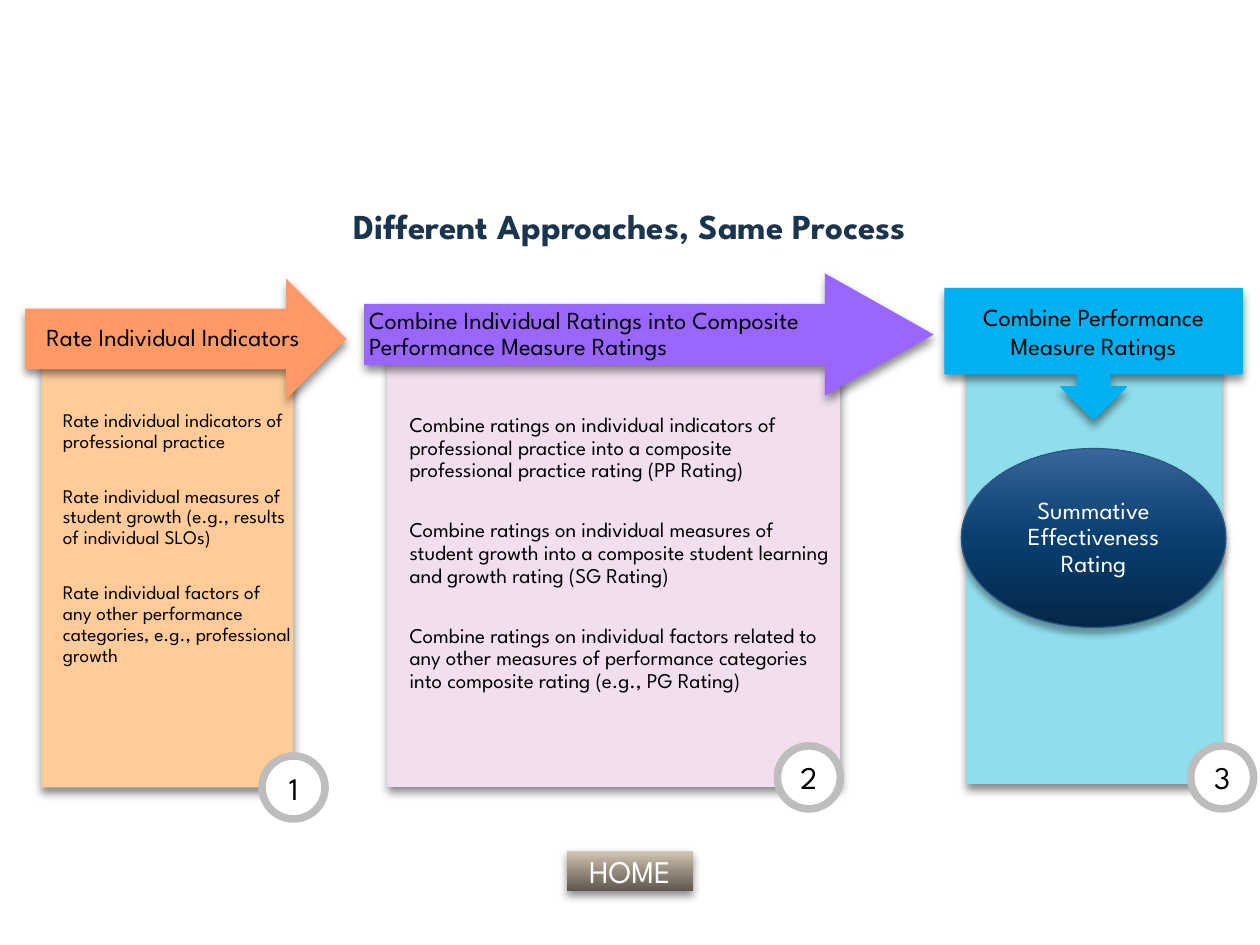
"""Build the slide that shows the three steps of the rating process."""
from dataclasses import dataclass
from typing import Optional

from lxml.etree import SubElement
from pptx import Presentation
from pptx.dml.color import RGBColor
from pptx.enum.shapes import MSO_SHAPE as Preset
from pptx.enum.text import MSO_ANCHOR as Anchor, PP_ALIGN as Align
from pptx.oxml.ns import qn
from pptx.util import Inches, Pt

FONT = "League Spartan"
BLACK, WHITE = "000000", "FFFFFF"
Stops = tuple[tuple[int, str], ...]
Box = tuple[float, float, float, float]
BRONZE: Stops = ((0, "5F574E"), (50, "988C7E"), (70, "B2A596"), (100, "D8CAB8"))
NAVY: Stops = ((0, "042747"), (50, "093F6F"), (70, "1A4C7E"), (100, "3B679A"))


@dataclass
class TextStyle:
    size: float
    color: str = BLACK
    bold: bool = False
    align: Align = Align.CENTER
    anchor: Anchor = Anchor.MIDDLE
    line_spacing: float = 1
    space_after: float = 0
    insets: Box = (0, 0, 0, 0)


@dataclass
class Block:
    preset: Preset
    box: Box
    fill: str | Stops
    line: Optional[str] = None
    line_width: float = 0.75
    shadow: Optional[tuple[int, int, int]] = (45, 5, 3)
    adjustments: tuple[float, ...] = ()
    paragraphs: tuple[str, ...] = ()
    style: Optional[TextStyle] = None


def rgb(value: str) -> RGBColor:
    return RGBColor.from_string(value)


def place(shape, box: Box) -> None:
    shape.left, shape.top, shape.width, shape.height = map(Inches, box)


def write(shape, paragraphs: tuple[str, ...], style: TextStyle) -> None:
    frame = shape.text_frame
    frame.word_wrap = True
    frame.vertical_anchor = style.anchor
    (frame.margin_left, frame.margin_top,
     frame.margin_right, frame.margin_bottom) = map(Inches, style.insets)
    frame.text = "\n".join(paragraphs)
    for paragraph in frame.paragraphs:
        paragraph.alignment = style.align
        paragraph.line_spacing = style.line_spacing
        paragraph.space_before = Pt(0)
        paragraph.space_after = Pt(style.space_after)
        for run in paragraph.runs:
            run.font.name = FONT
            run.font.size = Pt(style.size)
            run.font.bold = style.bold
            run.font.color.rgb = rgb(style.color)


def add_color(parent, value: str):
    return SubElement(parent, qn("a:srgbClr"), val=value)


def fill_gradient(shape, stops: Stops) -> None:
    shape.fill.gradient()
    shape.fill.gradient_angle = 90
    stop_list = shape.element.spPr.find(qn("a:gradFill")).find(qn("a:gsLst"))
    for stop in list(stop_list):
        stop_list.remove(stop)
    for position, value in stops:
        add_color(SubElement(stop_list, qn("a:gs"), pos=str(position * 1000)), value)


def cast_shadow(shape, opacity: int, blur: int, distance: int) -> None:
    effects = shape.element.spPr.find(qn("a:effectLst"))
    shadow = SubElement(effects, qn("a:outerShdw"), blurRad=str(Pt(blur)),
                        dist=str(Pt(distance)), dir="5400000", rotWithShape="0")
    SubElement(add_color(shadow, BLACK), qn("a:alpha"), val=str(opacity * 1000))


def add_block(slide, block: Block) -> None:
    shape = slide.shapes.add_shape(block.preset, *map(Inches, block.box))
    for index, value in enumerate(block.adjustments):
        shape.adjustments[index] = value
    if isinstance(block.fill, str):
        shape.fill.solid()
        shape.fill.fore_color.rgb = rgb(block.fill)
    else:
        fill_gradient(shape, block.fill)
    if block.line:
        shape.line.color.rgb = rgb(block.line)
        shape.line.width = Pt(block.line_width)
    else:
        shape.line.fill.background()
    shape.shadow.inherit = False
    if block.shadow:
        cast_shadow(shape, *block.shadow)
    if block.style:
        write(shape, block.paragraphs, block.style)


def body_style(size: float, space_after: float, top: float) -> TextStyle:
    return TextStyle(size, align=Align.LEFT, anchor=Anchor.TOP, line_spacing=0.9,
                     space_after=space_after, insets=(0.17, top, 0, 0))


def badge(number: int, left: float, top: float) -> Block:
    return Block(Preset.FLOWCHART_CONNECTOR, (left, top, 0.5, 0.5), WHITE, "BDBDBD", 4.33,
                 shadow=None, paragraphs=(str(number),), style=TextStyle(18))


BLOCKS = (
    Block(Preset.ACTION_BUTTON_CUSTOM, (4.5, 6.75, 1, 0.32), BRONZE,
          paragraphs=("HOME",), style=TextStyle(18, WHITE)),
    Block(Preset.RECTANGLE, (7.67, 2.76, 2.02, 3.46), "8FDDED", "8FDDED"),
    Block(Preset.DOWN_ARROW_CALLOUT, (7.5, 2.29, 2.36, 1.04), "00B0F0", "00B0F0",
          adjustments=(0.25, 0.25, 0.25, 0.65),
          paragraphs=("Combine Performance\vMeasure Ratings",), style=TextStyle(14)),
    Block(Preset.OVAL, (7.63, 3.56, 2.1, 1.42), NAVY, "2B5880", shadow=(35, 4, 3),
          paragraphs=("Summative Effectiveness Rating",),
          style=TextStyle(14, WHITE, line_spacing=0.9)),
    Block(Preset.RECTANGLE, (0.33, 2.78, 2, 3.47), "FFCC99",
          paragraphs=(
              "Rate individual indicators of professional practice",
              "Rate individual measures of student growth (e.g., results of individual SLOs)",
              "Rate individual factors of any other performance categories, "
              "e.g., professional growth"),
          style=body_style(11, 19.6, 0.48)),
    Block(Preset.RECTANGLE, (3.08, 2.78, 3.58, 3.46), "F1DFF0", "F1DFF0",
          paragraphs=(
              "Combine ratings on individual indicators of professional practice "
              "into a composite professional practice rating (PP Rating)",
              "Combine ratings on individual measures of student growth "
              "into a composite student learning and growth rating (SG Rating)",
              "Combine ratings on individual factors related to any other measures "
              "of performance categories into composite rating (e.g., PG Rating)"),
          style=body_style(12, 21.3, 0.51)),
    Block(Preset.RIGHT_ARROW, (2.89, 2.17, 4.52, 0.97), "9966FF", adjustments=(0.5, 0.89),
          paragraphs=("Combine Individual Ratings into Composite Performance Measure Ratings",),
          style=TextStyle(14, align=Align.LEFT, line_spacing=0.9, insets=(0.04, 0, 0, 0))),
    Block(Preset.RIGHT_ARROW, (0.2, 2.21, 2.55, 0.96), "FF9966", adjustments=(0.5, 0.5),
          paragraphs=("Rate Individual Indicators",),
          style=TextStyle(14, line_spacing=0.9, insets=(0.04, 0, 0, 0))),
    badge(1, 2.08, 6),
    badge(2, 6.17, 5.92),
    badge(3, 9.45, 5.92),
)


def main() -> None:
    presentation = Presentation()
    presentation.slide_width, presentation.slide_height = Inches(10), Inches(7.5)
    slide = presentation.slides.add_slide(presentation.slide_layouts[5])
    title = slide.shapes.title
    place(title, (0, 1.33, 10, 0.92))
    write(title, ("Different Approaches, Same Process",), TextStyle(20, "1A354D", bold=True))
    for block in BLOCKS:
        add_block(slide, block)
    presentation.save("out.pptx")


if __name__ == "__main__":
    main()
